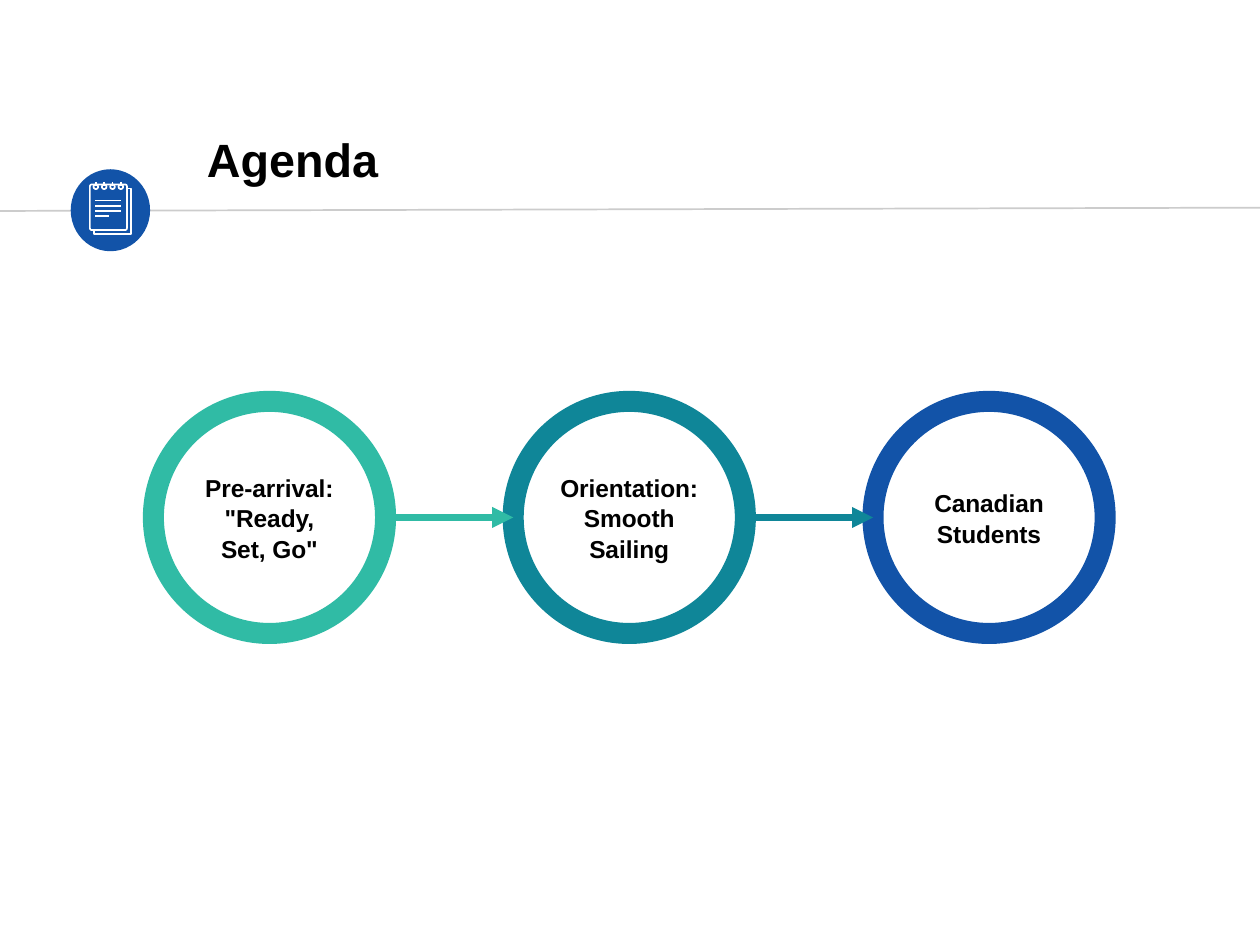
from lxml.etree import SubElement as Sub
from pptx import Presentation
from pptx.dml.color import RGBColor
from pptx.enum.shapes import MSO_CONNECTOR as Link, MSO_SHAPE as Form
from pptx.enum.text import MSO_ANCHOR as Anchor, PP_ALIGN as Align
from pptx.oxml.ns import qn
from pptx.util import Cm, Pt

BLACK = RGBColor(0x00, 0x00, 0x00)
WHITE = RGBColor(0xFF, 0xFF, 0xFF)
GREY = RGBColor(0xCC, 0xCC, 0xCC)
GREEN = RGBColor(0x30, 0xBB, 0xA5)
TEAL = RGBColor(0x0F, 0x86, 0x98)
BLUE = RGBColor(0x12, 0x53, 0xA8)

WIDTH, HEIGHT = 19.05, 14.29
STEPS = [
    ('Pre-arrival: "Ready, Set, Go"', GREEN),
    ("Orientation: Smooth Sailing", TEAL),
    ("Canadian Students", BLUE),
]


def add_line(slide, x1, y1, x2, y2, color, weight=0.75, arrow=False):
    line = slide.shapes.add_connector(Link.STRAIGHT, Cm(x1), Cm(y1), Cm(x2), Cm(y2))
    line.line.color.rgb = color
    line.line.width = Pt(weight)
    if arrow:
        Sub(line.line._get_or_add_ln(), qn("a:tailEnd"), type="triangle")
    Sub(line._element.spPr, qn("a:effectLst"))


def outline(shape, color, weight=0.75):
    shape.shadow.inherit = False
    shape.fill.background()
    shape.line.color.rgb = color
    shape.line.width = Pt(weight)
    return shape


def add_form(slide, form, left, top, width, height):
    return slide.shapes.add_shape(form, Cm(left), Cm(top), Cm(width), Cm(height))


def write(shape, text, size, align=Align.LEFT, spacing=1.0):
    frame = shape.text_frame
    frame.word_wrap = True
    frame.vertical_anchor = Anchor.MIDDLE
    frame.margin_left = frame.margin_right = Cm(0.18)
    frame.margin_top = frame.margin_bottom = Cm(0.18)
    para = frame.paragraphs[0]
    para.text = text
    para.alignment = align
    para.line_spacing = spacing
    para.font.name = "Arial"
    para.font.size = Pt(size)
    para.font.bold = True
    para.font.color.rgb = BLACK


def add_header(slide, left, top, width):
    # Rule, badge and title
    add_line(slide, left, top + 1.24, left + width, top + 1.19, GREY)
    badge = add_form(slide, Form.OVAL, left + 1.07, top + 0.61, 1.2, 1.24)
    badge.shadow.inherit = False
    badge.fill.solid()
    badge.fill.fore_color.rgb = BLUE
    badge.line.fill.background()
    title = slide.shapes.add_textbox(Cm(left + 2.95), Cm(top), Cm(8.08), Cm(0.91))
    write(title, "Agenda", 20)


def add_notepad(slide, left, top, width, height):
    # Back sheet, of which only the lower right edge shows
    shift = 0.06
    right, low = left + width + shift, top + height + shift
    sheet = slide.shapes.build_freeform(Cm(left + shift), Cm(top + height), scale=1.0)
    corners = [(left + shift, low), (right, low), (right, top + shift),
               (left + width, top + shift)]
    sheet.add_line_segments([(Cm(x), Cm(y)) for x, y in corners], close=False)
    outline(sheet.convert_to_shape(), WHITE)

    # Front sheet
    front = outline(add_form(slide, Form.ROUNDED_RECTANGLE, left, top, width, height), WHITE)
    front.adjustments[0] = 0.05

    # Written lines
    for row, length in enumerate([0.39, 0.39, 0.39, 0.21]):
        y = top + 0.24 + row * 0.08
        add_line(slide, left + 0.08, y, left + 0.08 + length, y, WHITE)

    # Binding rings
    ring = 0.07
    for i in range(4):
        x = left + 0.09 + i * 0.126
        outline(add_form(slide, Form.OVAL, x - ring / 2, top, ring, ring), WHITE)
        add_line(slide, x, top - 0.04, x, top + 0.03, WHITE)


def add_flow(slide, left, top, size, pitch):
    # Step circles
    for i, (text, color) in enumerate(STEPS):
        circle = add_form(slide, Form.OVAL, left + i * pitch, top, size, size)
        write(outline(circle, color, 9), text, 10.5, Align.CENTER, 1.05)

    # Arrows between neighbours
    middle = top + size / 2
    for i, (_, color) in enumerate(STEPS[:-1]):
        x = left + i * pitch
        add_line(slide, x + size, middle, x + pitch, middle, color, 3, arrow=True)


def main():
    deck = Presentation()
    deck.slide_width, deck.slide_height = Cm(WIDTH), Cm(HEIGHT)
    slide = deck.slides.add_slide(deck.slide_layouts[6])
    add_header(slide, 0, 1.95, WIDTH)
    add_notepad(slide, 1.36, 2.79, 0.56, 0.69)
    add_flow(slide, 2.32, 6.07, 3.51, 5.44)
    deck.save("out.pptx")


if __name__ == "__main__":
    main()
